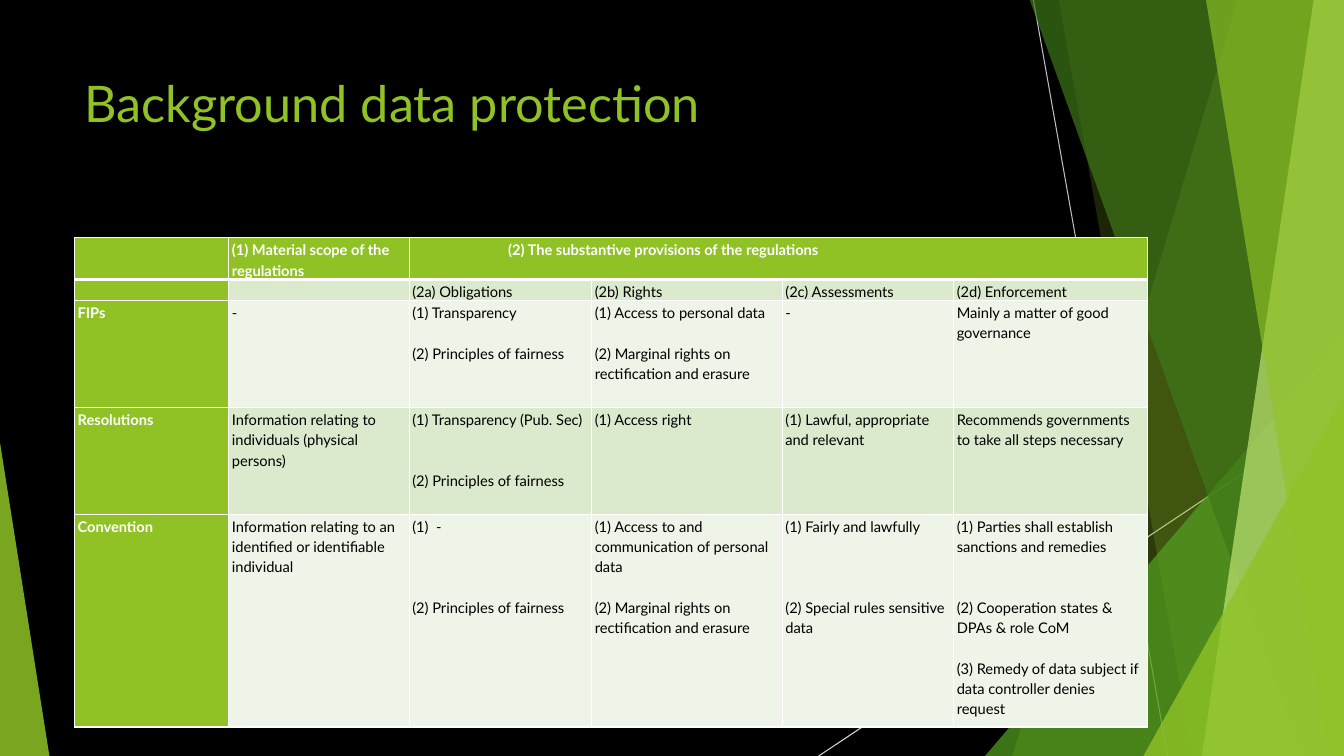
import pptx
import pptx.util
import pptx.dml.color
import pptx.enum.shapes
import pptx.oxml
import pptx.oxml.ns
import lxml.etree

Inches, Pt = pptx.util.Inches, pptx.util.Pt
RGB = pptx.dml.color.RGBColor.from_string
qn = pptx.oxml.ns.qn

theme = {
    "font": "Lato", "title_size": 36, "cell_size": 10.5, "line_gap": 14.5,
    "back": "000000", "green": "90C226", "mid_green": "54A021",
    "dark_green": "3F7819", "pale_green": "C0E474",
    "band": ["EEF4E8", "DBE9CD"], "white": "FFFFFF", "black": "000000",
}


def add_text(p, text, size, color, bold=False):
    r = p.add_run()
    r.text = text
    fmt = {"name": theme["font"], "size": Pt(size), "bold": bold}
    for key, value in fmt.items():
        setattr(r.font, key, value)
    r.font.color.rgb = RGB(color)


def paint(sp, color, alpha):
    sp.shadow.inherit = False
    sp.fill.solid()
    sp.fill.fore_color.rgb = RGB(color)
    sp.line.fill.background()
    clr = sp._element.spPr.find(qn("a:solidFill"))[0]
    lxml.etree.SubElement(clr, qn("a:alpha"), val=str(alpha * 1000))


prs = pptx.Presentation()
prs.slide_width, prs.slide_height = Inches(13.33), Inches(7.5)
s = prs.slides.add_slide(prs.slide_layouts[6])
s.background.fill.solid()
s.background.fill.fore_color.rgb = RGB(theme["back"])

rays = [(10.25, 0, 11.58, 7.5, "BFBFBF"), (13.33, 4.03, 8.12, 7.5, "D9D9D9")]
for x1, y1, x2, y2, color in rays:
    c = s.shapes.add_connector(pptx.enum.shapes.MSO_CONNECTOR.STRAIGHT,
                               Inches(x1), Inches(y1), Inches(x2), Inches(y2))
    c.line.color.rgb = RGB(color)
    c.line.width = Pt(0.75)
    lxml.etree.SubElement(c._element.spPr, qn("a:effectLst"))

facets = [
    ("blade", (12.28, 10.04), "green", 30),
    ("blade", (10.5, 11.83), "green", 20),
    ("triangle", (9.77, 3.33, 3.56, 1), "mid_green", 72),
    ("blade", (10.21, 12.91), "dark_green", 70),
    ("blade", (13.03, 11.92), "pale_green", 70),
    ("blade", (11.96, 13.18), "green", 65),
    ("triangle", (11.34, 3.93, 1.99, 1), "green", 80),
    ("triangle", (0, 4.39, 0.49, 0), "green", 85),
]
for kind, geometry, color, alpha in facets:
    if kind == "blade":
        top_x, bottom_x = geometry
        fb = s.shapes.build_freeform(Inches(top_x), Inches(-0.01))
        corners = [(13.33, -0.01), (13.33, 7.5), (bottom_x, 7.5)]
        fb.add_line_segments([(Inches(x), Inches(y)) for x, y in corners], close=True)
        sp = fb.convert_to_shape()
    else:
        x, y, w, apex = geometry
        sp = s.shapes.add_shape(pptx.enum.shapes.MSO_SHAPE.ISOSCELES_TRIANGLE,
                                Inches(x), Inches(y), Inches(w), Inches(7.5 - y))
        sp.adjustments[0] = apex
    paint(sp, theme[color], alpha)

tf = s.shapes.add_textbox(Inches(0.74), Inches(0.67), Inches(9.4), Inches(1.44)).text_frame
tf.word_wrap = True
add_text(tf.paragraphs[0], "Background data protection", theme["title_size"], theme["green"])

fair = "(2) Principles of fairness"
marginal = "(2) Marginal rights on rectification and erasure"
rows = [
    ["", "(1) Material scope of the regulations",
     "(2) The substantive provisions of the regulations", "", "", ""],
    ["", "", "(2a) Obligations", "(2b) Rights", "(2c) Assessments", "(2d) Enforcement"],
    ["FIPs", "-", [("(1) Transparency", 0), (fair, 1)],
     [("(1) Access to personal data", 0), (marginal, 1)],
     "-", "Mainly a matter of good governance"],
    ["Resolutions", "Information relating to individuals (physical persons)",
     [("(1) Transparency (Pub. Sec)", 0), (fair, 2)], "(1) Access right",
     "(1) Lawful, appropriate and relevant",
     "Recommends governments to take all steps necessary"],
    ["Convention", "Information relating to an identified or identifiable individual",
     [("(1)  -", 0), (fair, 3)],
     [("(1) Access to and communication of personal data", 0), (marginal, 1)],
     [("(1) Fairly and lawfully", 0), ("(2) Special rules sensitive data", 3)],
     [("(1) Parties shall establish sanctions and remedies", 0),
      ("(2) Cooperation states & DPAs & role CoM", 2),
      ("(3) Remedy of data subject if data controller denies request", 1)]],
]
widths = [1.53, 1.79, 1.81, 1.89, 1.7, 1.92]
heights = [0.37, 0.19, 1.06, 1.06, 2.11]
tbl = s.shapes.add_table(len(rows), len(widths), Inches(0.74), Inches(2.36),
                         Inches(sum(widths)), Inches(sum(heights))).table
for col, w in zip(tbl.columns, widths):
    col.width = Inches(w)
for row, h in zip(tbl.rows, heights):
    row.height = Inches(h)
tbl.cell(0, 2).merge(tbl.cell(0, 5))

margins = {"margin_left": 0.03, "margin_top": 0.01, "margin_right": 0.03, "margin_bottom": 0}
for i, row in enumerate(rows):
    for j, content in enumerate(row):
        cell = tbl.cell(i, j)
        for key, value in margins.items():
            setattr(cell, key, Inches(value))
        head = i == 0 or j == 0
        tcPr = cell._tc.get_or_add_tcPr()
        for side in "LRTB":
            thick = (i, side) in [(0, "B"), (1, "T")]
            ln = lxml.etree.SubElement(tcPr, qn("a:ln" + side), w=str(Pt(3 if thick else 1)))
            fill = lxml.etree.SubElement(ln, qn("a:solidFill"))
            lxml.etree.SubElement(fill, qn("a:srgbClr"), val=theme["white"])
        cell.fill.solid()
        cell.fill.fore_color.rgb = RGB(theme["green"] if head else theme["band"][i % 2])
        items = [(content, 0)] if isinstance(content, str) else content
        for k, (text, gap) in enumerate(items):
            p = cell.text_frame.add_paragraph() if k else cell.text_frame.paragraphs[0]
            p.line_spacing = 1.15
            if gap:
                p.space_before = Pt(gap * theme["line_gap"])
            if text:
                add_text(p, text, theme["cell_size"],
                         theme["white"] if head else theme["black"], head)
            else:
                lxml.etree.SubElement(p._p, qn("a:endParaRPr"),
                                      sz=str(int(theme["cell_size"] * 100)))
tbl.cell(0, 2).margin_left = Inches(0.98)

prs.save("out.pptx")
